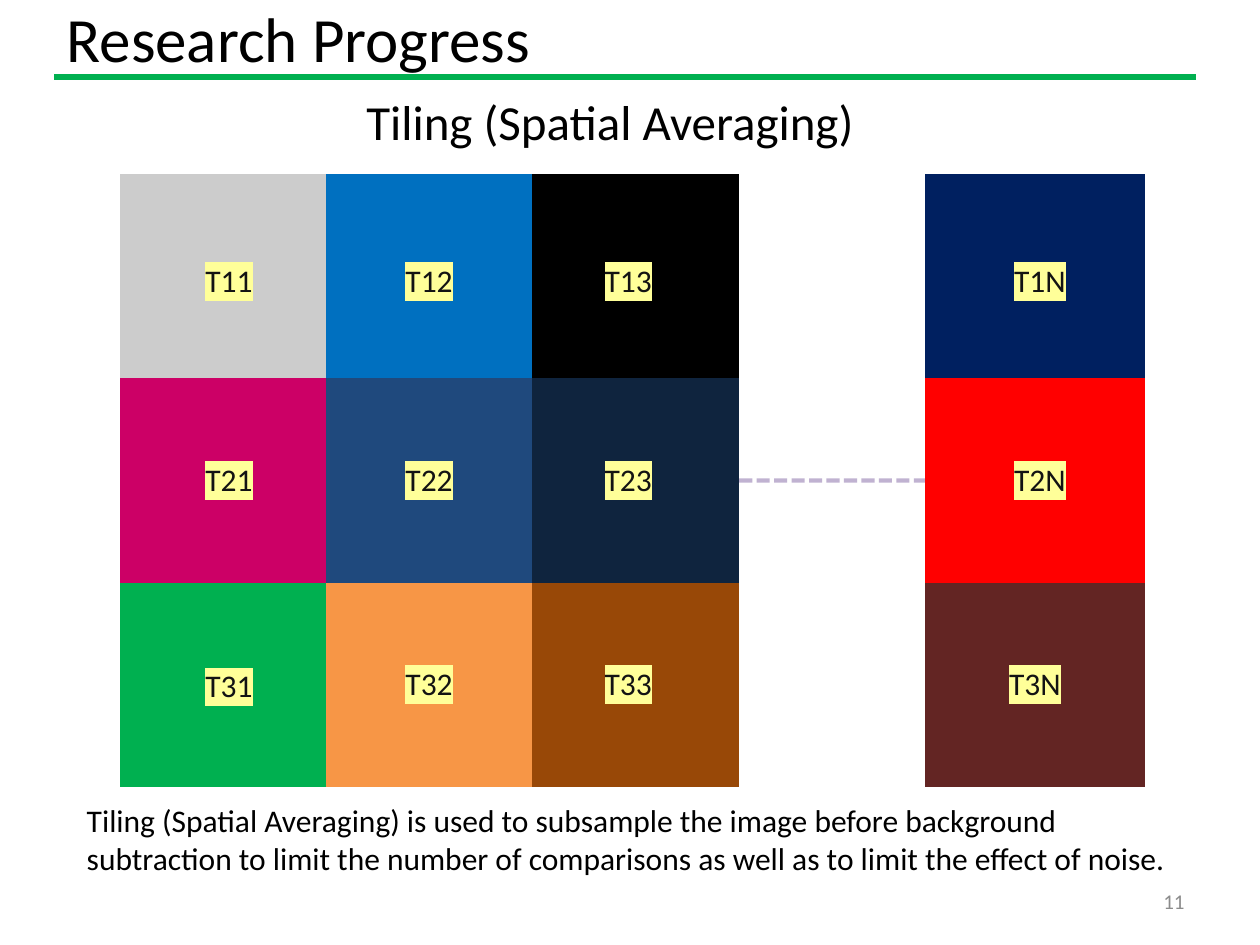
from lxml import etree
from pptx import Presentation
from pptx.dml.color import RGBColor
from pptx.enum.dml import MSO_LINE
from pptx.enum.shapes import MSO_CONNECTOR
from pptx.enum.text import MSO_ANCHOR, PP_ALIGN
from pptx.oxml.ns import qn
from pptx.util import Pt

COLORS = {
    "text": "000000", "number": "8C8C8C", "rule": "00B050", "dashes": "B3A2C7",
    "label": "131313", "highlight": "FFFF99",
}
NEAR_TILES = [
    ["CCCCCC", "0070C0", "000000"],
    ["CC0066", "1F497D", "0F243E"],
    ["00B050", "F79646", "984807"],
]
LAST_TILES = [["002060"], ["FF0000"], ["632523"]]
CELLS_PER_TILE = 4
CELL_HEIGHT = 29.2
TILES_TOP = 99.4
NO_STYLE_NO_GRID = "{2D5ABB26-0587-4C30-8999-92F81FD0307C}"

deck = Presentation()
deck.slide_width, deck.slide_height = Pt(720), Pt(540)
page = deck.slides.add_slide(deck.slide_layouts[6])


def add_text(text, left, top, width, height, size, color="text",
             align=PP_ALIGN.LEFT, anchor=MSO_ANCHOR.TOP):
    """Add a wrapped one-paragraph text box and return its run."""
    box = page.shapes.add_textbox(Pt(left), Pt(top), Pt(width), Pt(height))
    frame = box.text_frame
    frame.text = text
    frame.word_wrap = True
    frame.vertical_anchor = anchor
    para = frame.paragraphs[0]
    para.alignment = align
    span = para.runs[0]
    span.font.name = "Calibri"
    span.font.size = Pt(size)
    span.font.color.rgb = RGBColor.from_string(COLORS[color])
    return span


def add_tiles(tiles, left, cell_width):
    """Add a table in which each tile covers a square block of cells."""
    rows = len(tiles) * CELLS_PER_TILE
    columns = len(tiles[0]) * CELLS_PER_TILE
    holder = page.shapes.add_table(rows, columns, Pt(left), Pt(TILES_TOP),
                                   Pt(columns * cell_width), Pt(rows * CELL_HEIGHT))
    table = holder.table
    table.first_row = table.horz_banding = False
    table._tbl.tblPr.find(qn("a:tableStyleId")).text = NO_STYLE_NO_GRID
    for column in table.columns:
        column.width = Pt(cell_width)
    for r, row in enumerate(table.rows):
        row.height = Pt(CELL_HEIGHT)
        for c, cell in enumerate(row.cells):
            cell.fill.solid()
            color = tiles[r // CELLS_PER_TILE][c // CELLS_PER_TILE]
            cell.fill.fore_color.rgb = RGBColor.from_string(color)
    return holder


# Heading and body text
add_text("Research Progress", 31, 3.6, 648, 35.3, 36, anchor=MSO_ANCHOR.MIDDLE)
add_text("11", 516.2, 500.4, 167.8, 28.8, 12, "number", PP_ALIGN.RIGHT, MSO_ANCHOR.MIDDLE)
add_text("Tiling (Spatial Averaging)", 42.5, 49, 612, 41, 28, align=PP_ALIGN.CENTER)
add_text("Tiling (Spatial Averaging) is used to subsample the image before background "
         "subtraction to limit the number of comparisons as well as to limit the "
         "effect of noise.", 42.5, 454.3, 652.3, 51.1, 18)

# Tiles
near_tiles = add_tiles(NEAR_TILES, 68.4, 29.5)
last_tiles = add_tiles(LAST_TILES, 528.5, 31.5)

# Heading rule and the dashes standing for the tiles left out
rule = page.shapes.add_connector(MSO_CONNECTOR.STRAIGHT, Pt(31), Pt(44), Pt(683.3), Pt(44))
dashes = page.shapes.add_connector(MSO_CONNECTOR.STRAIGHT, 0, 0, 0, 0)
dashes.begin_connect(near_tiles, 3)
dashes.end_connect(last_tiles, 1)
for connector, color, width in [(rule, "rule", 3), (dashes, "dashes", 2.5)]:
    connector.line.color.rgb = RGBColor.from_string(COLORS[color])
    connector.line.width = Pt(width)
dashes.line.dash_style = MSO_LINE.SQUARE_DOT
dash_color = dashes.line._ln.find(qn("a:solidFill")).find(qn("a:srgbClr"))
etree.SubElement(dash_color, qn("a:alpha"), val="82000")
for connector in (rule, dashes):
    etree.SubElement(connector._element.spPr, qn("a:effectLst"))

# Tile labels
label_lefts = {"1": 110.2, "2": 224.6, "3": 338.4, "N": 572.4}
label_tops = {"1": 145.4, "2": 259.2, "3": 375.8}
nudges = {"T31": (0, 1.5), "T3N": (-2.9, 0)}
for row, top in label_tops.items():
    for column, left in label_lefts.items():
        name = f"T{row}{column}"
        shift_x, shift_y = nudges.get(name, (0, 0))
        span = add_text(name, left + shift_x, top + shift_y, 54, 28.8, 18, "label")
        highlight = etree.Element(qn("a:highlight"))
        etree.SubElement(highlight, qn("a:srgbClr"), val=COLORS["highlight"])
        span.font._element.find(qn("a:solidFill")).addnext(highlight)

deck.save("out.pptx")
